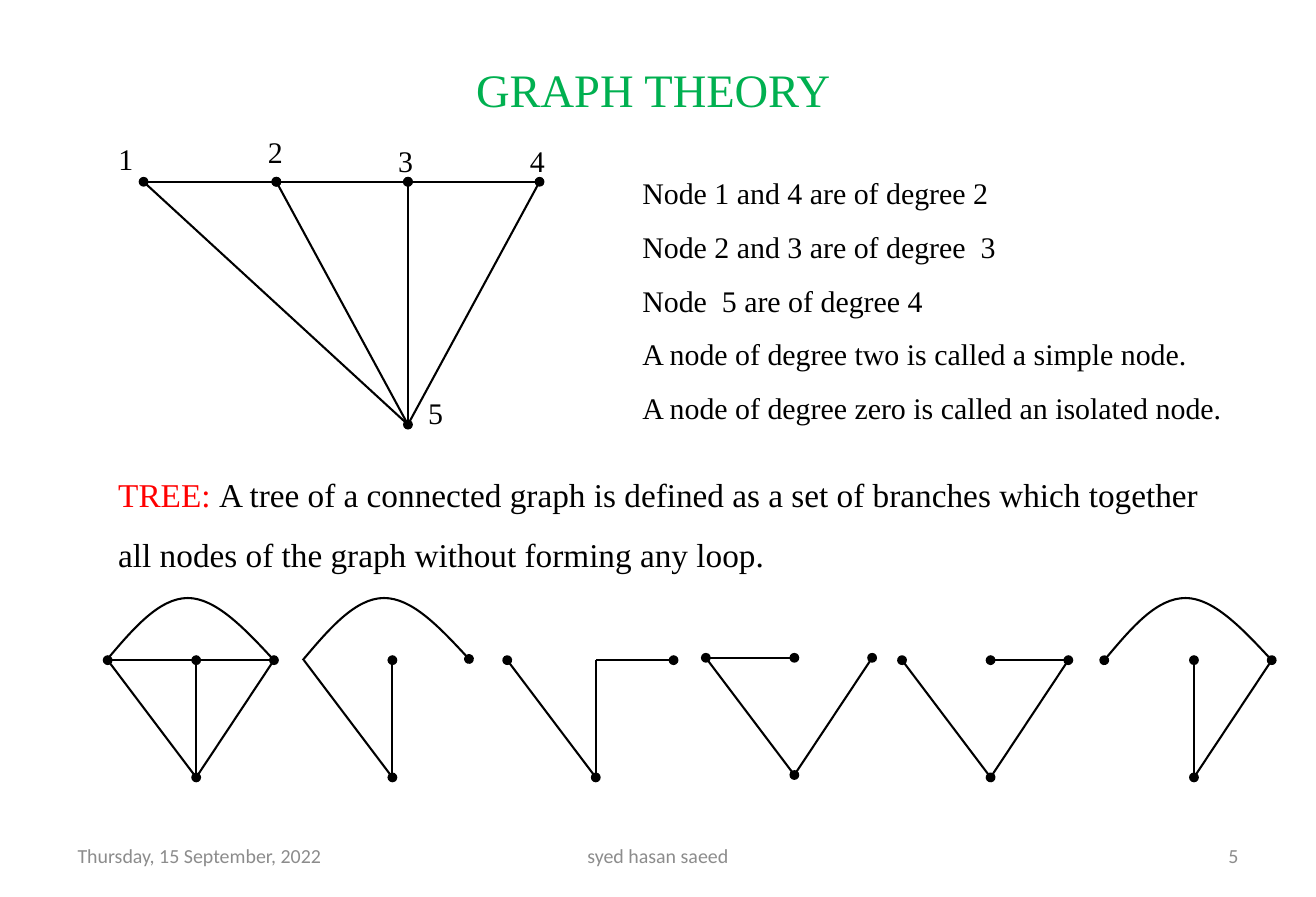
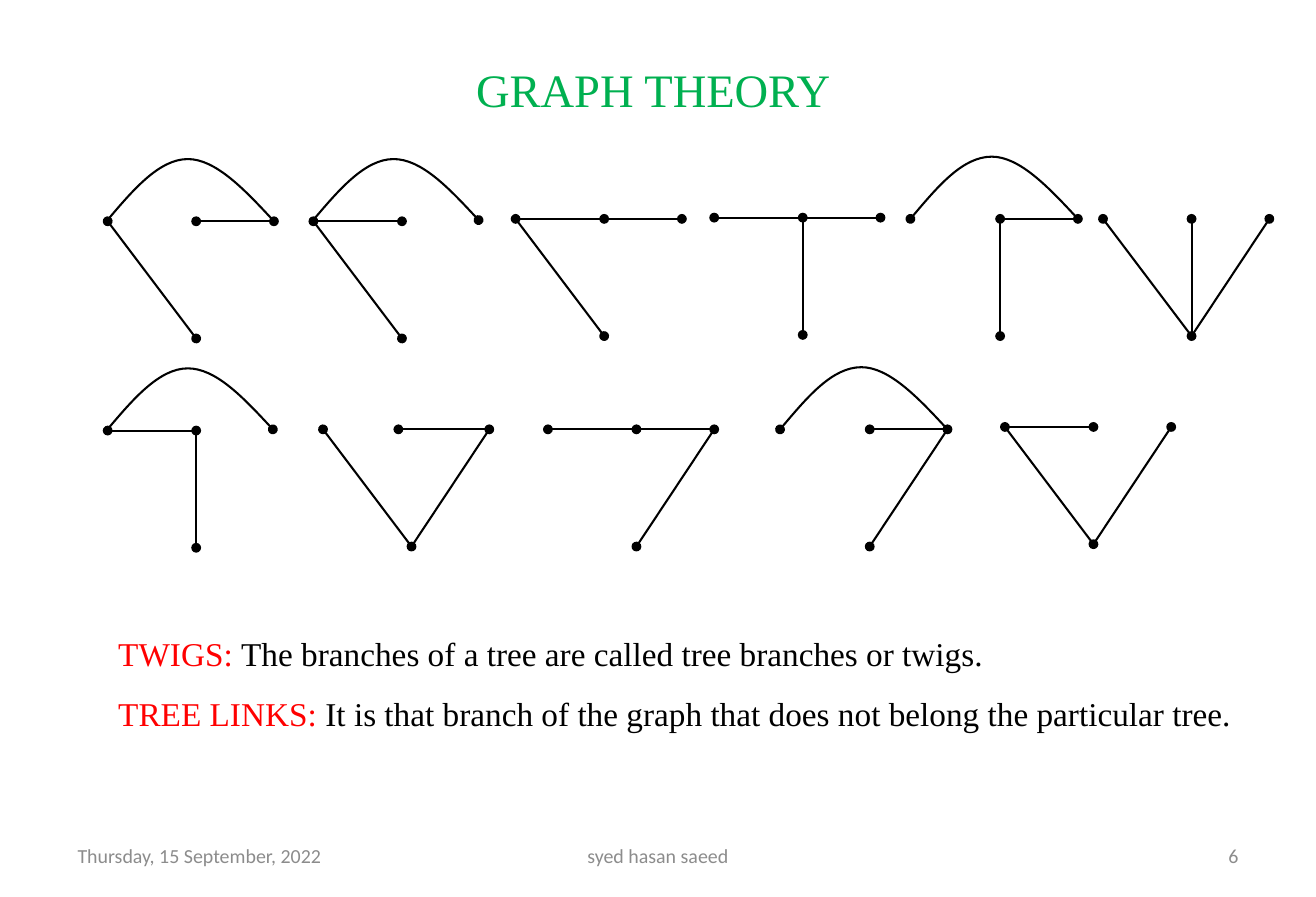
from dataclasses import dataclass
from typing import NamedTuple

import lxml.etree
import pptx
import pptx.dml.color
import pptx.enum.shapes
import pptx.enum.text
import pptx.oxml.ns
import pptx.util
from pptx.util import Inches

Align = pptx.enum.text.PP_ALIGN
Anchor = pptx.enum.text.MSO_ANCHOR
qn = pptx.oxml.ns.qn


@dataclass(frozen=True)
class Theme:
    serif: str = "Times New Roman"
    sans: str = "Calibri"
    black: str = "000000"
    green: str = "00B050"
    red: str = "FF0000"
    grey: str = "8C8C8C"
    title_size: int = 28
    body_size: int = 20
    note_size: int = 18
    footer_size: int = 12
    line_width: float = 1.25


THEME = Theme()


class Point(NamedTuple):
    x: float
    y: float


class Box(NamedTuple):
    left: float
    top: float
    width: float
    height: float


class Run(NamedTuple):
    text: str
    color: str = THEME.black


@dataclass(frozen=True)
class Style:
    size: int
    font: str = THEME.serif
    align: Align = Align.LEFT
    anchor: Anchor = Anchor.TOP
    spacing: float = 1.0


@dataclass(frozen=True)
class Tree:
    """A small graph on nodes L, M, R and B; the point is its node L.

    A branch "oL-Mo" is straight and "oL~Ro" curved; each "o" is a dot at that end.
    """
    left: float
    top: float
    branches: str
    middle: float = 0.74

    def node(self, name: str) -> Point:
        offsets = {"L": (0, 0), "M": (self.middle, 0), "R": (1.39, 0), "B": (0.74, 0.98)}
        x, y = offsets[name]
        return Point(self.left + x, self.top + y)


NOTE = Style(THEME.note_size)
NOTE_LIST = Style(THEME.note_size, spacing=1.5)
BODY = Style(THEME.body_size, spacing=1.5)
TITLE = Style(THEME.title_size, align=Align.CENTER, anchor=Anchor.MIDDLE)

# Main graph: nodes, the corners of their labels, and branches
NODES = {
    "1": Point(1.2, 1.52),
    "2": Point(2.31, 1.52),
    "3": Point(3.41, 1.52),
    "4": Point(4.51, 1.52),
    "5": Point(3.41, 3.55),
}
LABELS = {
    "1": Point(0.89, 1.13),
    "2": Point(2.14, 1.07),
    "3": Point(3.23, 1.14),
    "4": Point(4.33, 1.14),
    "5": Point(3.48, 3.25),
}
BRANCHES = "o1-2o o2-3o o3-4o 5-1 5-4 3-5o 5-2"

NOTES = [
    "Node 1 and 4 are of degree 2",
    "Node 2 and 3 are of degree  3",
    "Node  5 are of degree 4",
    "A node of degree two is called a simple node.",
    "A node of degree zero is called an isolated node.",
]

# Trees of the graph
FIRST_TREES = [
    Tree(0.9, 5.52, "oL-Mo M-Ro M-Bo L-B B-R L~R"),
    Tree(2.54, 5.52, "oM-Bo L-B L~Ro"),
    Tree(4.24, 5.52, "M-Ro M-Bo oL-B"),
    Tree(5.9, 5.5, "oL-Mo L-B oB-Ro"),
    Tree(7.54, 5.52, "oM-Ro oL-Bo B-R"),
    Tree(9.24, 5.52, "oM-Bo B-Ro oL~R"),
]
MORE_TREES = [
    Tree(0.9, 1.85, "oM-Ro oL-Bo L~R"),
    Tree(2.62, 1.85, "oL-Mo L-Bo L~Ro"),
    Tree(4.31, 1.83, "oL-Mo M-Ro L-Bo"),
    Tree(5.97, 1.82, "oL-Mo M-Ro M-Bo"),
    Tree(7.62, 1.83, "oM-Ro M-Bo oL~R"),
    Tree(9.22, 1.83, "oM-Bo oL-B B-Ro"),
    Tree(0.9, 3.6, "oL-Mo M-Bo L~Ro"),
    Tree(2.7, 3.59, "oM-Ro oL-B oB-R", middle=0.63),
    Tree(4.58, 3.59, "oL-Mo M-Ro oB-R"),
    Tree(6.53, 3.59, "oM-Ro oB-R oL~R"),
    Tree(8.4, 3.57, "oL-Mo L-B oB-Ro"),
]

# Start, then two cubic segments, measured from node L
ARC = [(-0.01, 0), (0.21, -0.26), (0.43, -0.52), (0.67, -0.52),
       (0.9, -0.52), (1.14, -0.27), (1.38, -0.01)]


def add_text(shapes, box: Box, paragraphs: list[list[Run]], style: Style) -> None:
    shape = shapes.add_textbox(*map(Inches, box))
    frame = shape.text_frame
    frame.word_wrap = True
    frame.vertical_anchor = style.anchor
    for index, runs in enumerate(paragraphs):
        paragraph = frame.add_paragraph() if index else frame.paragraphs[0]
        paragraph.alignment = style.align
        paragraph.line_spacing = style.spacing
        paragraph.font.name = style.font
        paragraph.font.size = pptx.util.Pt(style.size)
        for part in runs:
            run = paragraph.add_run()
            run.text = part.text
            run.font.color.rgb = pptx.dml.color.RGBColor.from_string(part.color)


def style_line(shape, head: bool, tail: bool) -> None:
    shape.line.color.rgb = pptx.dml.color.RGBColor.from_string(THEME.black)
    shape.line.width = pptx.util.Pt(THEME.line_width)
    for tag, dotted in (("a:headEnd", head), ("a:tailEnd", tail)):
        if dotted:
            lxml.etree.SubElement(shape.get_or_add_ln(), qn(tag), type="oval")


def add_line(shapes, start: Point, end: Point, head: bool, tail: bool) -> None:
    connector = shapes.add_connector(
        pptx.enum.shapes.MSO_CONNECTOR.STRAIGHT, *map(Inches, (*start, *end)))
    style_line(connector, head, tail)
    lxml.etree.SubElement(connector.element.spPr, qn("a:effectLst"))


def add_arc(shapes, origin: Point, head: bool, tail: bool) -> None:
    points = [(Inches(origin.x + x), Inches(origin.y + y)) for x, y in ARC]
    builder = shapes.build_freeform(*points[0])
    builder.add_line_segments(points[1:], close=False)
    shape = builder.convert_to_shape()
    shape.fill.background()
    style_line(shape, head, tail)
    shape.shadow.inherit = False
    # Merge each three straight segments into one cubic curve
    segments = list(shape.element.iter(qn("a:lnTo")))
    for first in range(0, len(segments), 3):
        curve, *others = segments[first:first + 3]
        curve.tag = qn("a:cubicBezTo")
        for segment in others:
            curve.append(segment[0])
            segment.getparent().remove(segment)


def add_tree(slide, tree: Tree) -> None:
    group = slide.shapes.add_group_shape()
    for branch in tree.branches.split():
        head, tail = branch.startswith("o"), branch.endswith("o")
        start, kind, end = branch.strip("o")
        if kind == "~":
            add_arc(group.shapes, tree.node(start), head, tail)
        else:
            add_line(group.shapes, tree.node(start), tree.node(end), head, tail)


def add_main_graph(slide) -> None:
    group = slide.shapes.add_group_shape()
    for branch in BRANCHES.split():
        start, end = branch.strip("o").split("-")
        add_line(group.shapes, NODES[start], NODES[end],
                 branch.startswith("o"), branch.endswith("o"))
    for name, corner in LABELS.items():
        add_text(group.shapes, Box(*corner, 0.39, 0.4), [[Run(name)]], NOTE)


def add_slide(presentation, number: int):
    """Add a blank slide with the shared footer and title."""
    slide = presentation.slides.add_slide(presentation.slide_layouts[6])
    footers = [
        (0.55, 2.57, "Thursday, 15 September, 2022", Align.LEFT),
        (3.76, 3.48, "syed hasan saeed", Align.CENTER),
        (7.88, 2.57, str(number), Align.RIGHT),
    ]
    for left, width, text, align in footers:
        style = Style(THEME.footer_size, THEME.sans, align, Anchor.MIDDLE)
        add_text(slide.shapes, Box(left, 6.95, width, 0.4), [[Run(text, THEME.grey)]], style)
    add_text(slide.shapes, Box(0.26, 0.39, 10.4, 0.7),
             [[Run("GRAPH THEORY", THEME.green)]], TITLE)
    return slide


def build_graph_slide(presentation) -> None:
    slide = add_slide(presentation, 5)
    add_main_graph(slide)
    add_text(slide.shapes, Box(5.27, 1.26, 5.08, 3.28),
             [[Run(note)] for note in NOTES], NOTE_LIST)
    add_text(slide.shapes, Box(0.89, 3.75, 9.3, 1.05), [[
        Run("TREE: ", THEME.red),
        Run("A tree of a connected graph is defined as a set of branches which together "
            "all nodes of the graph without forming any loop."),
    ]], BODY)
    for tree in FIRST_TREES:
        add_tree(slide, tree)


def build_trees_slide(presentation) -> None:
    slide = add_slide(presentation, 6)
    for tree in MORE_TREES:
        add_tree(slide, tree)
    add_text(slide.shapes, Box(0.89, 5.08, 9.53, 1.62), [
        [Run("TWIGS: ", THEME.red),
         Run("The branches of a tree are called tree branches or twigs.")],
        [Run("TREE LINKS: ", THEME.red),
         Run("It is that branch of the graph that does not belong the particular tree.")],
    ], BODY)


def main() -> None:
    presentation = pptx.Presentation()
    presentation.slide_width = Inches(11)
    presentation.slide_height = Inches(7.5)
    build_graph_slide(presentation)
    build_trees_slide(presentation)
    presentation.save("out.pptx")


if __name__ == "__main__":
    main()
